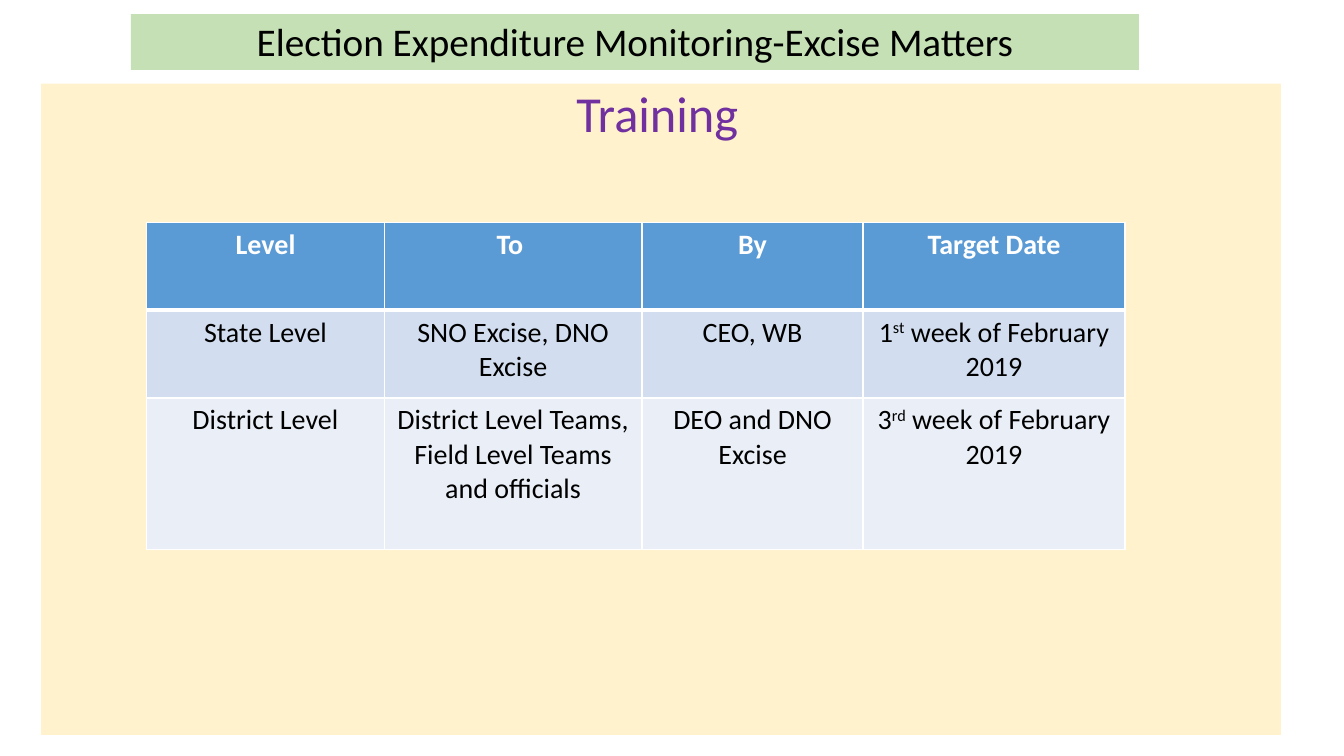
import pptx
import pptx.dml.color
import pptx.enum.shapes
import pptx.enum.text
import pptx.oxml
import pptx.oxml.ns
import pptx.util

Cm = pptx.util.Cm
Pt = pptx.util.Pt

COLOURS = {
    "title": "C5E0B4", "panel": "FFF2CC", "heading": "7030A0",
    "header": "5B9BD5", "odd": "D2DEEF", "even": "EAEFF7",
    "white": "FFFFFF", "black": "000000",
}
COLUMN_WIDTHS = [5.98, 6.5, 5.57, 6.6]
ROW_HEIGHTS = [2.21, 2.21, 3.81]
ROW_FILLS = ["header", "odd", "even"]
# A cell is a list of (text, is superscript) runs, or plain text.
TRAINING_PLAN = [
    ["Level", "To ", "By", "Target Date"],
    ["State Level", "SNO Excise, DNO Excise", "CEO, WB",
     [("1", False), ("st", True), (" week of February 2019", False)]],
    ["District Level", "District Level Teams, Field Level Teams and officials",
     "DEO and DNO Excise",
     [("3", False), ("rd", True), (" week of February 2019", False)]],
]


def colour(name):
    return pptx.dml.color.RGBColor.from_string(COLOURS[name])


def apply(target, values):
    for name, value in values.items():
        setattr(target, name, value)


class SlideBuilder:
    font_name = "Calibri"

    def __init__(self, slide):
        self.slide = slide

    def add_run(self, paragraph, text, size, colour_name, bold=False, superscript=False):
        run = paragraph.add_run()
        run.text = text
        apply(run.font, {"name": self.font_name, "size": Pt(size), "bold": bold})
        run.font.color.rgb = colour(colour_name)
        if superscript:
            run.font._element.set("baseline", "30000")

    def add_panel(self, position, fill_name, anchor, runs):
        """Add a borderless rectangle with one centred line of (text, size, colour) runs."""
        shape = self.slide.shapes.add_shape(
            pptx.enum.shapes.MSO_SHAPE.RECTANGLE, *map(Cm, position))
        shape.shadow.inherit = False
        shape.fill.solid()
        shape.fill.fore_color.rgb = colour(fill_name)
        shape.line.fill.background()
        apply(shape.text_frame, {"word_wrap": True, "vertical_anchor": anchor})
        paragraph = shape.text_frame.paragraphs[0]
        apply(paragraph, {"alignment": pptx.enum.text.PP_ALIGN.CENTER, "line_spacing": 0.9})
        for run in runs:
            self.add_run(paragraph, *run)

    def add_borders(self, cell, widths):
        """Draw white cell borders; widths maps each side (L, R, T, B) to points."""
        properties = cell._tc.get_or_add_tcPr()
        for side, width in widths.items():
            properties.append(pptx.oxml.parse_xml(
                f'<a:ln{side} {pptx.oxml.ns.nsdecls("a")} w="{Pt(width)}"><a:solidFill>'
                f'<a:srgbClr val="{COLOURS["white"]}"/></a:solidFill></a:ln{side}>'))

    def add_table(self, left, top, rows):
        table = self.slide.shapes.add_table(
            len(rows), len(COLUMN_WIDTHS), Cm(left), Cm(top),
            Cm(sum(COLUMN_WIDTHS)), Cm(sum(ROW_HEIGHTS))).table
        for column, width in zip(table.columns, COLUMN_WIDTHS):
            column.width = Cm(width)
        for row, height in zip(table.rows, ROW_HEIGHTS):
            row.height = Cm(height)
        for row_index, row in enumerate(rows):
            is_header = row_index == 0
            borders = {"L": 1, "R": 1, "T": 3 if row_index == 1 else 1,
                       "B": 3 if is_header else 1}
            for column_index, content in enumerate(row):
                cell = table.cell(row_index, column_index)
                self.add_borders(cell, borders)
                cell.fill.solid()
                cell.fill.fore_color.rgb = colour(ROW_FILLS[row_index])
                paragraph = cell.text_frame.paragraphs[0]
                paragraph.alignment = pptx.enum.text.PP_ALIGN.CENTER
                runs = [(content, False)] if isinstance(content, str) else content
                for text, superscript in runs:
                    self.add_run(paragraph, text, 20, "white" if is_header else "black",
                                 is_header, superscript)


def main():
    presentation = pptx.Presentation()
    apply(presentation, {"slide_width": Cm(33.87), "slide_height": Cm(19.05)})
    builder = SlideBuilder(presentation.slides.add_slide(presentation.slide_layouts[6]))
    anchors = pptx.enum.text.MSO_ANCHOR
    builder.add_panel((3.3, 0.36, 25.4, 1.4), "title", anchors.BOTTOM,
                      [("Election Expenditure Monitoring-Excise Matters", 28, "black")])
    builder.add_panel((1.04, 2.11, 31.24, 16.41), "panel", anchors.TOP,
                      [("Training", 36, "heading"), (" ", 24, "black")])
    builder.add_table(3.7, 5.61, TRAINING_PLAN)
    presentation.save("out.pptx")


if __name__ == "__main__":
    main()
